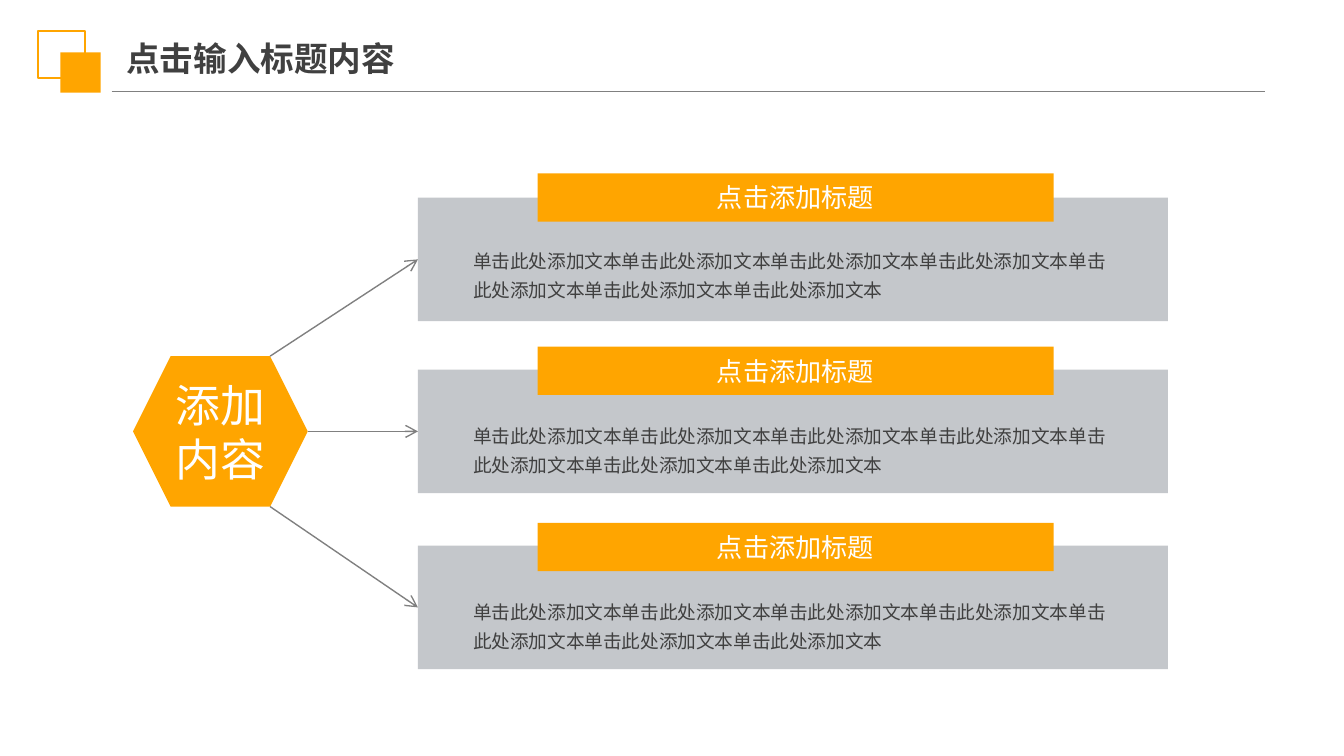
"""Build a slide with a central topic that leads to three titled text cards."""
from dataclasses import dataclass

import pptx
import pptx.dml.color
import pptx.enum.shapes
import pptx.enum.text
import pptx.oxml.ns
import pptx.util
from lxml import etree
from pptx.util import Inches

SHAPES = pptx.enum.shapes.MSO_SHAPE
ALIGN = pptx.enum.text.PP_ALIGN
ANCHOR = pptx.enum.text.MSO_ANCHOR
qn = pptx.oxml.ns.qn


@dataclass(frozen=True)
class Theme:
    font: str = "Noto Sans CJK SC"
    accent: str = "FFA500"
    panel: str = "C4C7CB"
    rule: str = "808080"
    ink: str = "404040"
    light: str = "FFFFFF"
    heading_size: int = 18
    topic_size: int = 24
    banner_size: int = 14
    body_size: int = 10


THEME = Theme()
CARD_LEFT = 3.11
CARD_HEIGHT = 0.92
CARD_TOPS = ((1.29, 1.47, 1.77), (2.58, 2.75, 3.07), (3.89, 4.06, 4.38))
TOPIC_EXITS = ((2.01, 2.65), (2.29, 3.21), (2.01, 3.77))
BODY = "单击此处添加文本" * 7


def rgb(value):
    return pptx.dml.color.RGBColor.from_string(value)


def write(holder, text, size, color, align=ALIGN.LEFT, anchor=ANCHOR.MIDDLE,
          inset=(0.08, 0.04), bold=False, spacing=None):
    frame = holder.text_frame
    frame.word_wrap = True
    frame.vertical_anchor = anchor
    frame.margin_left = frame.margin_right = Inches(inset[0])
    frame.margin_top = frame.margin_bottom = Inches(inset[1])
    paragraph = frame.paragraphs[0]
    paragraph.text = text
    paragraph.alignment = align
    if spacing:
        paragraph.line_spacing = spacing
    font = paragraph.font
    font.size = pptx.util.Pt(size)
    font.bold = bold
    font.color.rgb = rgb(color)
    font.name = THEME.font
    defaults = paragraph._p.pPr.find(qn("a:defRPr"))
    etree.SubElement(defaults, qn("a:ea"), typeface=THEME.font)
    return frame


def add_block(shapes, box, fill=None, outline=None, kind=SHAPES.RECTANGLE):
    block = shapes.add_shape(kind, *map(Inches, box))
    block.shadow.inherit = False
    if fill:
        block.fill.solid()
        block.fill.fore_color.rgb = rgb(fill)
    else:
        block.fill.background()
    if outline:
        block.line.color.rgb = rgb(outline)
        block.line.width = pptx.util.Pt(1)
    else:
        block.line.fill.background()
    return block


def add_rule(shapes, start, end, arrow=False):
    rule = shapes.add_connector(pptx.enum.shapes.MSO_CONNECTOR.STRAIGHT,
                                *map(Inches, start + end))
    rule.line.color.rgb = rgb(THEME.rule)
    rule.line.width = pptx.util.Pt(0.75)
    if arrow:
        etree.SubElement(rule.line._get_or_add_ln(), qn("a:tailEnd"), type="arrow")
    etree.SubElement(rule._element.spPr, qn("a:effectLst"))


def add_header(shapes):
    add_rule(shapes, (0.83, 0.68), (9.41, 0.68))
    emblem = shapes.add_group_shape().shapes
    add_block(emblem, (0.28, 0.23, 0.35, 0.35), outline=THEME.accent)
    add_block(emblem, (0.45, 0.39, 0.3, 0.3), THEME.accent)
    heading = shapes.add_textbox(*map(Inches, (0.94, 0.22, 2.33, 0.42)))
    write(heading, "点击输入标题内容", THEME.heading_size, THEME.ink,
          inset=(0, 0.05), bold=True)


def add_topic(shapes):
    topic = add_block(shapes, (0.99, 2.65, 1.3, 1.12), THEME.accent, kind=SHAPES.HEXAGON)
    write(topic, "添加内容", THEME.topic_size, THEME.light, ALIGN.CENTER)


def add_card(shapes, tops, topic_exit):
    banner_top, panel_top, body_top = tops
    add_block(shapes, (CARD_LEFT, panel_top, 5.58, CARD_HEIGHT), THEME.panel)
    banner = add_block(shapes, (4, banner_top, 3.84, 0.36), THEME.accent)
    write(banner, "点击添加标题", THEME.banner_size, THEME.light, ALIGN.CENTER)
    body = shapes.add_textbox(*map(Inches, (3.44, body_top, 4.96, 0.49)))
    frame = write(body, BODY, THEME.body_size, THEME.ink, anchor=ANCHOR.TOP, spacing=1.3)
    frame.auto_size = pptx.enum.text.MSO_AUTO_SIZE.SHAPE_TO_FIT_TEXT
    add_rule(shapes, topic_exit, (CARD_LEFT, panel_top + CARD_HEIGHT / 2), arrow=True)


def main():
    deck = pptx.Presentation()
    deck.slide_width = Inches(10)
    deck.slide_height = deck.slide_width * 9 // 16
    shapes = deck.slides.add_slide(deck.slide_layouts[6]).shapes
    add_header(shapes)
    add_topic(shapes)
    for tops, topic_exit in zip(CARD_TOPS, TOPIC_EXITS):
        add_card(shapes, tops, topic_exit)
    deck.save("out.pptx")


if __name__ == "__main__":
    main()
